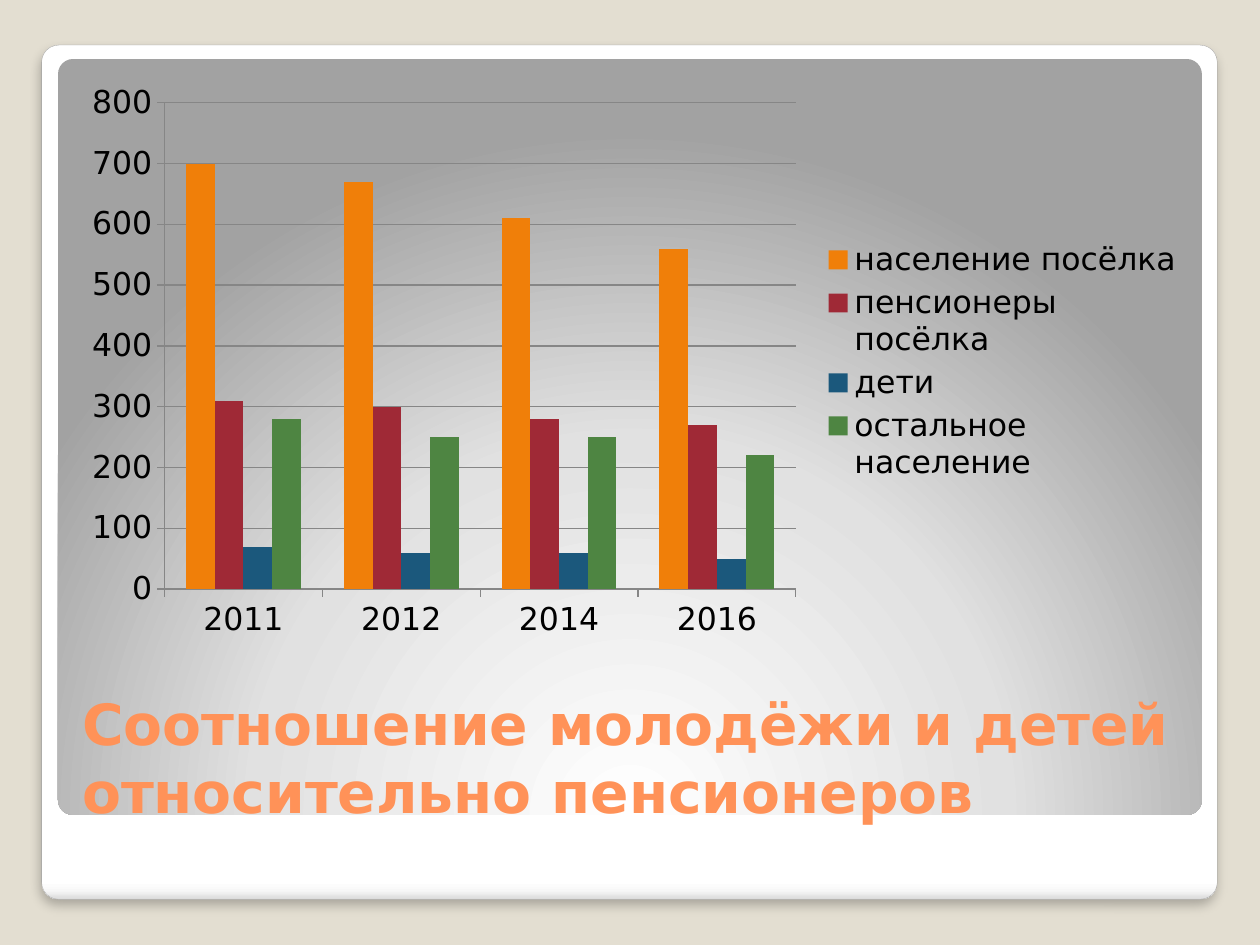
"""Builds a slide comparing pensioners, children and other residents in a clustered column chart."""
from dataclasses import dataclass

from lxml.etree import SubElement
from pptx import Presentation
from pptx.chart.data import CategoryChartData
from pptx.dml.color import RGBColor
from pptx.enum.chart import XL_CHART_TYPE, XL_LEGEND_POSITION, XL_TICK_MARK
from pptx.enum.shapes import MSO_SHAPE
from pptx.enum.text import MSO_ANCHOR, MSO_AUTO_SIZE, PP_ALIGN
from pptx.oxml import parse_xml
from pptx.oxml.ns import nsdecls, qn
from pptx.util import Cm, Pt

HEADING = "Соотношение молодёжи и детей относительно пенсионеров"
YEARS = ["2011", "2012", "2014", "2016"]
GROUPS = [
    ("население посёлка", (700, 670, 610, 560), "F07F09"),
    ("пенсионеры посёлка", (310, 300, 280, 270), "9F2936"),
    ("дети", (70, 60, 60, 50), "1B587C"),
    ("остальное население", (280, 250, 250, 220), "4E8542"),
]

CARD_BOX = (0.84, 0.91, 23.7, 17.22)
PANEL_BOX = (1.17, 1.19, 23.06, 15.24)
CHART_BOX = (1.4, 1.47, 22.73, 11.63)
HEADING_BOX = (1.4, 13.84, 22.73, 2.92)

CARD_STOPS = [(0, "FFFFFF"), (98, "FFFFFF"), (99, "F7F7F7"), (100, "DADADA")]
PANEL_STOPS = [(0, "FFFFFF"), (55, "E1E1E1"), (100, "A2A2A2")]
DOWNWARD = '<a:lin ang="5400000" scaled="0"/>'
FROM_BELOW = ('<a:path path="circle"><a:fillToRect l="50000" t="175000" '
              'r="50000" b="-75000"/></a:path>')


@dataclass(frozen=True)
class Theme:
    font: str = "DejaVu Sans"
    heading_size: float = 32.4
    chart_size: float = 18
    background: str = "E3DED1"
    heading: str = "FF9258"
    text: str = "000000"
    axis: str = "868686"
    card_edge: str = "A4A4A4"


THEME = Theme()


def rgb(value):
    return RGBColor.from_string(value)


def lengths(box):
    return [Cm(side) for side in box]


def style_font(font, size, color, bold=False):
    font.name, font.size, font.bold = THEME.font, Pt(size), bold
    font.color.rgb = rgb(color)


def add_rounded(slide, box, stops, direction):
    rounded = slide.shapes.add_shape(MSO_SHAPE.ROUNDED_RECTANGLE, *lengths(box))
    rounded.adjustments[0] = 0.02
    rounded.shadow.inherit = False
    rounded.line.fill.background()
    rounded.fill.background()
    stop_xml = "".join(
        f'<a:gs pos="{pos * 1000}"><a:srgbClr val="{color}"/></a:gs>' for pos, color in stops)
    gradient = parse_xml(f'<a:gradFill {nsdecls("a")} rotWithShape="1">'
                         f'<a:gsLst>{stop_xml}</a:gsLst>{direction}</a:gradFill>')
    properties = rounded._element.spPr
    properties.replace(properties.find(qn("a:noFill")), gradient)
    return rounded


def add_card(slide):
    card = add_rounded(slide, CARD_BOX, CARD_STOPS, DOWNWARD)
    card.line.color.rgb = rgb(THEME.card_edge)
    card.line.width = Pt(0.16)
    effects = card._element.spPr.find(qn("a:effectLst"))
    shadow = SubElement(effects, qn("a:outerShdw"), blurRad=str(Pt(6)), dist=str(Pt(4)),
                        dir="5400000", algn="t", rotWithShape="0")
    tint = SubElement(shadow, qn("a:srgbClr"), val="000000")
    SubElement(tint, qn("a:alpha"), val="25000")


def place_heading(slide):
    heading = slide.shapes.title
    slide.shapes._spTree.append(heading._element)
    heading.left, heading.top, heading.width, heading.height = lengths(HEADING_BOX)
    frame = heading.text_frame
    frame.text = HEADING
    frame.word_wrap = True
    frame.auto_size = MSO_AUTO_SIZE.NONE
    frame.vertical_anchor = MSO_ANCHOR.BOTTOM
    paragraph = frame.paragraphs[0]
    paragraph.alignment = PP_ALIGN.LEFT
    style_font(paragraph.font, THEME.heading_size, THEME.heading, bold=True)


def add_population_chart(slide):
    population = CategoryChartData()
    population.categories = YEARS
    for name, values, _ in GROUPS:
        population.add_series(name, values)
    chart = slide.shapes.add_chart(
        XL_CHART_TYPE.COLUMN_CLUSTERED, *lengths(CHART_BOX), population).chart
    style_font(chart.font, THEME.chart_size, THEME.text)
    chart.has_title = False
    chart.has_legend = True
    chart.legend.position = XL_LEGEND_POSITION.RIGHT
    chart.legend.include_in_layout = False

    plot = chart.plots[0]
    plot.gap_width, plot.overlap, plot.vary_by_categories = 150, 0, False
    for series, (_, _, color) in zip(plot.series, GROUPS):
        series.format.fill.solid()
        series.format.fill.fore_color.rgb = rgb(color)

    years, people = chart.category_axis, chart.value_axis
    people.minimum_scale, people.maximum_scale, people.major_unit = 0, 800, 100
    people.has_major_gridlines = True
    for axis in (years, people):
        axis.major_tick_mark = XL_TICK_MARK.OUTSIDE
        axis.minor_tick_mark = XL_TICK_MARK.NONE
    for ruled in (years, people, people.major_gridlines):
        ruled.format.line.color.rgb = rgb(THEME.axis)
        ruled.format.line.width = Pt(0.75)


def main():
    deck = Presentation()
    deck.slide_width, deck.slide_height = Cm(25.4), Cm(19.05)
    slide = deck.slides.add_slide(deck.slide_layouts[5])
    slide.background.fill.solid()
    slide.background.fill.fore_color.rgb = rgb(THEME.background)
    add_card(slide)
    add_rounded(slide, PANEL_BOX, PANEL_STOPS, FROM_BELOW)
    place_heading(slide)
    add_population_chart(slide)
    deck.save("out.pptx")


if __name__ == "__main__":
    main()
